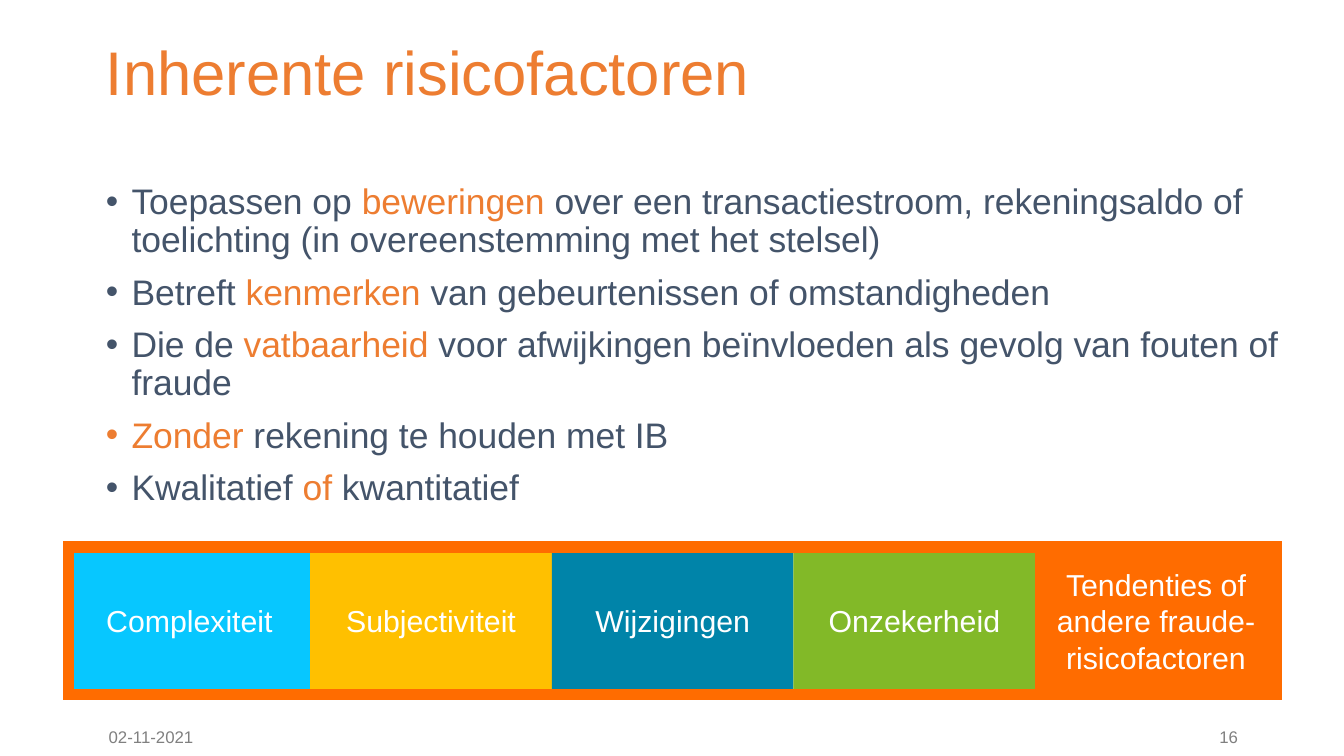
"""Build the slide on inherent risk factors."""
from lxml import etree
from pptx import Presentation
from pptx import util as u
from pptx.dml import color
from pptx.enum import shapes, text
from pptx.oxml import ns

ORANGE, SLATE, GREY, WHITE = "ED7D31", "44546A", "808080", "FFFFFF"
FRAME = "FF6C00"


def rgb(value):
    return color.RGBColor.from_string(value)


def write(paragraph, words, size, ink):
    run = paragraph.add_run()
    run.text = words
    for name, value in {"name": "Arial", "size": u.Pt(size)}.items():
        setattr(run.font, name, value)
    run.font.color.rgb = rgb(ink)


deck = Presentation()
deck.slide_width, deck.slide_height = u.Inches(10), u.Inches(10 * 9 / 16)
slide = deck.slides.add_slide(deck.slide_layouts[6])

labels = [
    ("Inherente risicofactoren", (0.69, 0.08, 8.62, 0.96), 33, ORANGE,
     {"line_spacing": 0.9}),
    ("02-11-2021", (0.71, 5.28, 0.89, 0.41), 9, GREY, {}),
    ("16", (8.71, 5.28, 0.6, 0.41), 9, GREY,
     {"alignment": text.PP_ALIGN.RIGHT}),
]
for words, place, size, ink, layout in labels:
    label = slide.shapes.add_textbox(*map(u.Inches, place)).text_frame
    label.word_wrap = True
    label.vertical_anchor = text.MSO_ANCHOR.MIDDLE
    for name, value in layout.items():
        setattr(label.paragraphs[0], name, value)
    write(label.paragraphs[0], words, size, ink)

points = [
    "Toepassen op *beweringen* over een transactiestroom, rekeningsaldo of "
    "toelichting (in overeenstemming met het stelsel)",
    "Betreft *kenmerken *van gebeurtenissen of omstandigheden",
    "Die de *vatbaarheid* voor afwijkingen beïnvloeden als gevolg van fouten of fraude",
    "*Zonder* rekening te houden met IB",
    "Kwalitatief *of* kwantitatief",
]
body = slide.shapes.add_textbox(*map(u.Inches, (0.69, 1.32, 9.01, 3.57))).text_frame
body.word_wrap = True
for number, point in enumerate(points):
    paragraph = body.add_paragraph() if number else body.paragraphs[0]
    properties = paragraph._p.get_or_add_pPr()
    properties.set("marL", str(u.Inches(0.19)))
    properties.set("indent", str(u.Inches(-0.19)))
    etree.SubElement(properties, ns.qn("a:buFont"), typeface="Arial")
    etree.SubElement(properties, ns.qn("a:buChar"), char="•")
    paragraph.line_spacing = 0.9
    paragraph.space_before = u.Pt(7.5 if number else 0)
    for part, words in enumerate(point.split("*")):
        if words:
            write(paragraph, words, 19, ORANGE if part % 2 else SLATE)

factors = {
    "Complexiteit": "07C7FF",
    "Subjectiviteit": "FFC000",
    "Wijzigingen": "0084A9",
    "Onzekerheid": "82B928",
    "Tendenties of andere fraude-risicofactoren": FRAME,
}
left, top, width, height = 0.51, 4.07, 8.99, 1.1
step = width / len(factors)
for column, (factor, fill) in enumerate(factors.items()):
    tile = slide.shapes.add_shape(
        shapes.MSO_SHAPE.RECTANGLE, u.Inches(left + column * step), u.Inches(top),
        u.Inches(step), u.Inches(height))
    tile.shadow.inherit = False
    tile.fill.solid()
    tile.fill.fore_color.rgb = rgb(fill)
    tile.line.fill.background()
    tile.text_frame.word_wrap = True
    tile.text_frame.vertical_anchor = text.MSO_ANCHOR.MIDDLE
    tile.text_frame.paragraphs[0].alignment = text.PP_ALIGN.CENTER
    write(tile.text_frame.paragraphs[0], factor, 16.2, WHITE)

frame = slide.shapes.add_shape(
    shapes.MSO_SHAPE.RECTANGLE, *map(u.Inches, (left, top, width, height)))
frame.shadow.inherit = False
frame.fill.background()
frame.line.color.rgb = rgb(FRAME)
frame.line.width = u.Pt(6)
outline = frame.element.spPr.find(ns.qn("a:ln"))
etree.SubElement(outline, ns.qn("a:miter"), lim="800000")

deck.save("out.pptx")
